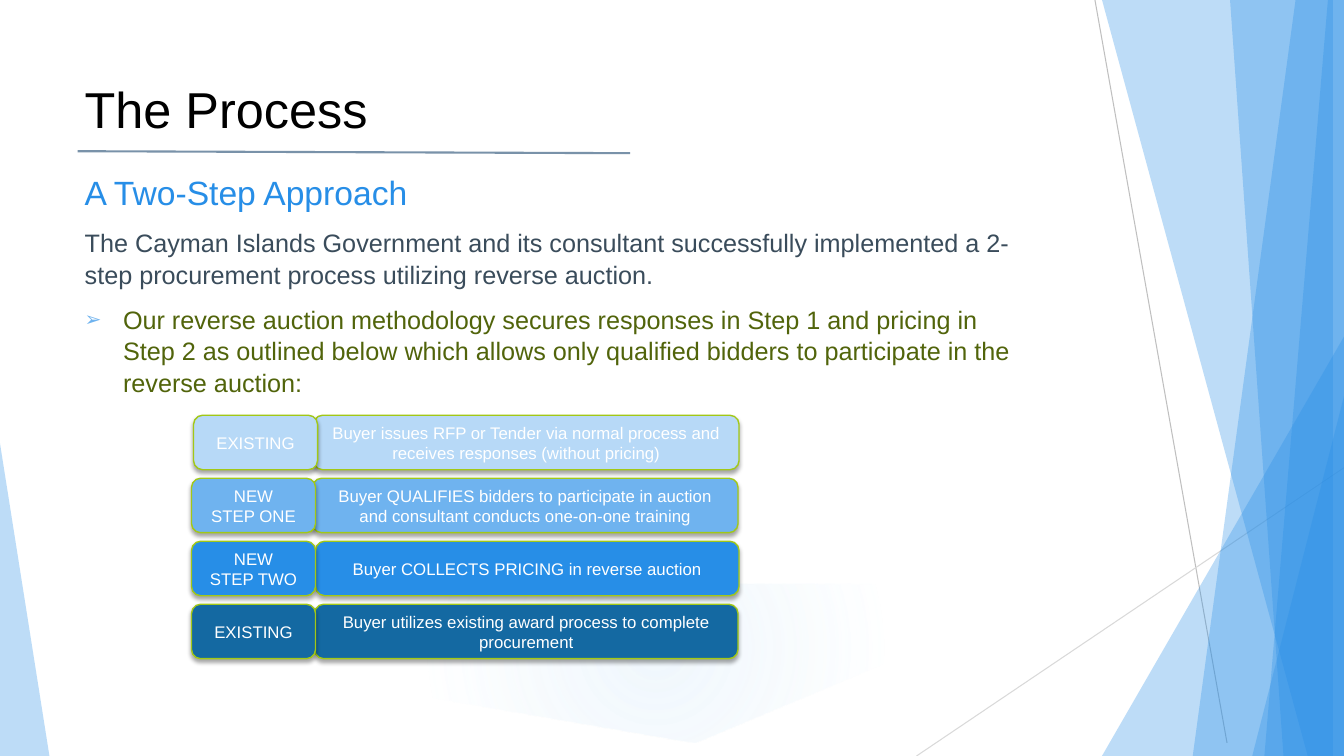
from pptx import Presentation
from pptx.dml.color import RGBColor
from pptx.enum.shapes import MSO_CONNECTOR as Connector, MSO_SHAPE as Shape
from pptx.enum.text import MSO_ANCHOR as Anchor, MSO_AUTO_SIZE as AutoSize, PP_ALIGN as Align
from pptx.oxml import parse_xml
from pptx.oxml.ns import nsdecls, qn
from pptx.util import Inches, Pt

FONT = "Arial"
BLACK = RGBColor(0x00, 0x00, 0x00)
WHITE = RGBColor(0xFF, 0xFF, 0xFF)
BLUE = RGBColor(0x27, 0x8E, 0xE7)
PALE_BLUE = RGBColor(0xB7, 0xD9, 0xF7)
MID_BLUE = RGBColor(0x6F, 0xB3, 0xEF)
DARK_BLUE = RGBColor(0x14, 0x69, 0xA2)
NAVY = RGBColor(0x0B, 0x3A, 0x63)
GLOW = RGBColor(0xCB, 0xE6, 0xF9)
SLATE = RGBColor(0x3A, 0x4C, 0x5B)
OLIVE = RGBColor(0x51, 0x64, 0x0B)
LIME = RGBColor(0xA2, 0xC8, 0x16)
GREY = RGBColor(0xBF, 0xBF, 0xBF)
LIGHT_GREY = RGBColor(0xD9, 0xD9, 0xD9)

BANDS = [
    [(12.85, 0), (13.33, 0), (13.33, 7.5), (11.83, 7.5)],
    [(12.2, 0), (13.33, 0), (13.33, 7.5), (12.73, 7.5)],
    [(12.54, 7.5), (13.17, 0), (13.33, 0), (13.33, 7.5)],
    [(10.93, 0), (13.22, 0), (13.22, 7.5), (12.97, 7.5)],
]
TRIANGLES = [
    (10.93, 3.34, 2.4, 4.16, 1),
    (12.42, 3.93, 0.91, 3.57, 1),
    (0, 4.4, 0.49, 3.1, 0),
]
GLOW_OUTLINE = [(0, 5.8), (10, 5.79), (10, 6.07), (6.89, 7.37), (0, 6.19)]
BODY = [
    ("A Two-Step Approach", 24, BLUE),
    ("The Cayman Islands Government and its consultant successfully implemented "
     "a 2-step procurement process utilizing reverse auction.", 18, SLATE),
    ("Our reverse auction methodology secures responses in Step 1 and pricing in "
     "Step 2 as outlined below which allows only qualified bidders to participate "
     "in the reverse auction:", 18, OLIVE),
]
STEPS = [
    ("EXISTING", 1.92, "Buyer issues RFP or Tender via normal process and receives "
     "responses (without pricing)", 3.11, 4.22, PALE_BLUE),
    ("NEW\nSTEP ONE", 1.9, "Buyer QUALIFIES bidders to participate in auction and "
     "consultant conducts one-on-one training", 3.1, 4.22, MID_BLUE),
    ("NEW\nSTEP TWO", 1.9, "Buyer COLLECTS PRICING in reverse auction", 3.13, 4.2, BLUE),
    ("EXISTING", 1.9, "Buyer utilizes existing award process to complete procurement",
     3.12, 4.2, DARK_BLUE),
]
STEP_TOP, STEP_PITCH, STEP_HEIGHT, LABEL_WIDTH = 4.12, 0.625, 0.54, 1.23


def set_alpha(properties, percent):
    color = properties.find(qn("a:solidFill"))[0]
    color.append(parse_xml(f'<a:alpha {nsdecls("a")} val="{percent * 1000}"/>'))


def paint(shape, color, alpha=None):
    shape.shadow.inherit = False
    shape.fill.solid()
    shape.fill.fore_color.rgb = color
    shape.line.fill.background()
    if alpha:
        set_alpha(shape._element.spPr, alpha)


def add_polygon(slide, points, color):
    corners = [(round(x * 100), round(y * 100)) for x, y in points]
    builder = slide.shapes.build_freeform(*corners[0], scale=Inches(0.01))
    builder.add_line_segments(corners[1:], close=True)
    polygon = builder.convert_to_shape()
    paint(polygon, color, 30)
    return polygon


def add_triangle(slide, left, top, width, height, apex):
    triangle = slide.shapes.add_shape(Shape.ISOSCELES_TRIANGLE, Inches(left), Inches(top),
                                      Inches(width), Inches(height))
    triangle.adjustments[0] = apex
    paint(triangle, BLUE, 30)


def add_glow(slide):
    glow = add_polygon(slide, GLOW_OUTLINE, GLOW)
    stops = "".join(
        f'<a:gs pos="{position}"><a:srgbClr val="{GLOW}"><a:alpha val="{alpha}"/></a:srgbClr></a:gs>'
        for position, alpha in [(0, 30000), (45000, 0), (100000, 0)])
    gradient = parse_xml(
        f'<a:gradFill {nsdecls("a")}><a:gsLst>{stops}</a:gsLst><a:path path="circle">'
        '<a:fillToRect l="65000" t="40000" r="35000" b="60000"/></a:path></a:gradFill>')
    properties = glow._element.spPr
    properties.replace(properties.find(qn("a:solidFill")), gradient)


def add_line(slide, start, end, color, width, alpha=None):
    line = slide.shapes.add_connector(Connector.STRAIGHT, *map(Inches, start + end))
    line.line.color.rgb = color
    line.line.width = Pt(width)
    line._element.spPr.append(parse_xml(f'<a:effectLst {nsdecls("a")}/>'))
    if alpha:
        set_alpha(line.line._ln, alpha)


def format_text(para, size, color):
    for span in para.runs:
        span.font.name = FONT
        span.font.size = Pt(size)
        span.font.color.rgb = color


def place(holder, left, top, width, height):
    holder.left, holder.top = Inches(left), Inches(top)
    holder.width, holder.height = Inches(width), Inches(height)
    holder.text_frame.auto_size = AutoSize.NONE
    holder.text_frame.vertical_anchor = Anchor.TOP
    tree = holder._element.getparent()
    tree.append(holder._element)


def fill_title(title):
    place(title, 0.74, 0.67, 9.4, 1.44)
    title.text_frame.margin_top = Inches(0.1)
    title.text_frame.text = "The Process"
    para = title.text_frame.paragraphs[0]
    para.alignment = Align.LEFT
    format_text(para, 36, BLACK)


def set_bullet(para, shown):
    properties = para._p.get_or_add_pPr()
    indent = Inches(0.38) if shown else 0
    properties.set("marL", str(indent))
    properties.set("indent", str(-indent))
    if not shown:
        properties.append(parse_xml(f'<a:buNone {nsdecls("a")}/>'))
        return
    for markup in (f'<a:buClr {nsdecls("a")}><a:srgbClr val="{MID_BLUE}"/></a:buClr>',
                   f'<a:buSzPct {nsdecls("a")} val="80000"/>',
                   f'<a:buFont {nsdecls("a")} typeface="{FONT}"/>',
                   f'<a:buChar {nsdecls("a")} char="➢"/>'):
        properties.append(parse_xml(markup))


def fill_body(body):
    place(body, 0.74, 1.64, 9.4, 4.97)
    frame = body.text_frame
    frame.text = "\n".join(text for text, size, color in BODY)
    for level, (para, (text, size, color)) in enumerate(zip(frame.paragraphs, BODY)):
        para.level = level
        set_bullet(para, level == 2)
        para.line_spacing = 1.04
        para.space_before = Pt(10 if level else 0)
        para.alignment = Align.LEFT
        format_text(para, size, color)


def add_step_box(slide, text, left, top, width, color):
    box = slide.shapes.add_shape(Shape.ROUNDED_RECTANGLE, Inches(left), Inches(top),
                                 Inches(width), Inches(STEP_HEIGHT))
    paint(box, color)
    box.line.color.rgb = LIME
    box.line.width = Pt(1)
    box._element.spPr.find(qn("a:effectLst")).append(parse_xml(
        f'<a:outerShdw {nsdecls("a")} blurRad="{Pt(3)}" dist="{Pt(2)}" dir="5400000" '
        'rotWithShape="0"><a:srgbClr val="000000"><a:alpha val="35000"/></a:srgbClr></a:outerShdw>'))
    frame = box.text_frame
    frame.word_wrap = True
    frame.vertical_anchor = Anchor.MIDDLE
    frame.text = text
    for para in frame.paragraphs:
        para.alignment = Align.CENTER
        format_text(para, 12, WHITE)


def main():
    deck = Presentation()
    deck.slide_width, deck.slide_height = Inches(13.33), Inches(7.5)
    slide = deck.slides.add_slide(deck.slide_layouts[1])
    add_line(slide, (10.86, 0), (12.17, 7.37), GREY, 0.75)
    add_line(slide, (13.33, 4.64), (9.09, 7.5), LIGHT_GREY, 0.75)
    for band in BANDS:
        add_polygon(slide, band, BLUE)
    for triangle in TRIANGLES:
        add_triangle(slide, *triangle)
    add_glow(slide)
    fill_title(slide.shapes.title)
    fill_body(slide.placeholders[1])
    for row, (label, label_left, text, text_left, text_width, color) in enumerate(STEPS):
        top = STEP_TOP + row * STEP_PITCH
        add_step_box(slide, text, text_left, top, text_width, color)
        add_step_box(slide, label, label_left, top, LABEL_WIDTH, color)
    add_line(slide, (0.77, 1.5), (6.25, 1.52), NAVY, 1.5, 54)
    deck.save("out.pptx")


if __name__ == "__main__":
    main()
